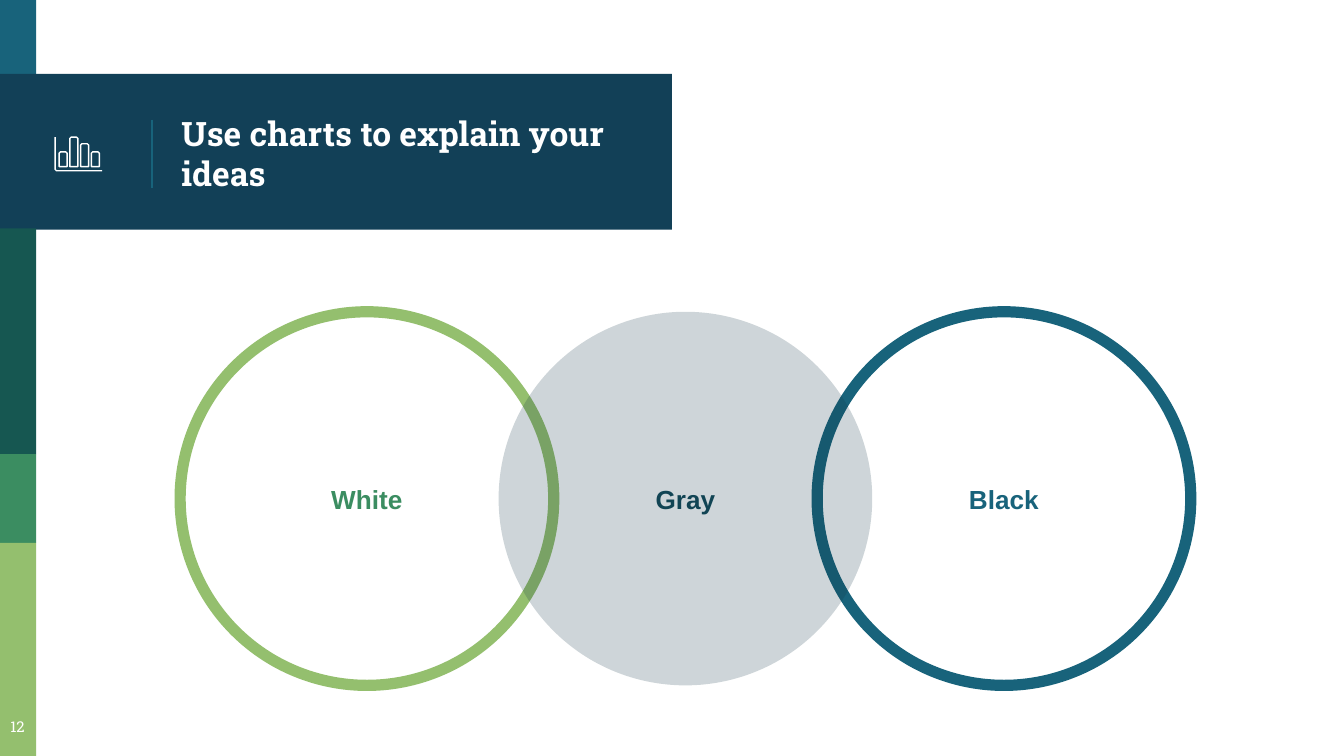
"""Build a title slide section with three overlapping labelled circles."""
from lxml.etree import SubElement
from pptx import Presentation
from pptx.dml.color import RGBColor
from pptx.enum.shapes import MSO_CONNECTOR, MSO_SHAPE
from pptx.enum.text import MSO_ANCHOR, PP_ALIGN
from pptx.oxml.ns import qn
from pptx.util import Inches, Pt

WHITE = RGBColor(0xFF, 0xFF, 0xFF)
BLUE = RGBColor(0x18, 0x63, 0x7B)
NAVY = RGBColor(0x12, 0x40, 0x57)
INK = RGBColor(0x0E, 0x31, 0x42)
SLATE = RGBColor(0x11, 0x44, 0x54)
PINE = RGBColor(0x16, 0x57, 0x51)
GREEN = RGBColor(0x3B, 0x8D, 0x61)
LIME = RGBColor(0x94, 0xBF, 0x6E)

WIDTH, HEIGHT = 10, 5.625
STRIPE = 0.27
TITLE = "Use charts to explain your ideas"
PAGE_NUMBER = "12"
BANDS = [
    (0, 0.58, STRIPE, BLUE),
    (0.55, 1.71, WIDTH / 2, NAVY),
    (1.7, 3.38, STRIPE, PINE),
    (3.38, 4.04, STRIPE, GREEN),
    (4.04, HEIGHT, STRIPE, LIME),
]
CIRCLES = [
    {"column": 0, "label": "White", "color": GREEN, "ring": LIME},
    {"column": 2, "label": "Black", "color": BLUE, "ring": BLUE},
    {"column": 1, "label": "Gray", "color": SLATE, "ring": None},
]
CIRCLE_LEFT, CIRCLE_TOP, CIRCLE_SIZE, CIRCLE_PITCH = 1.34, 2.32, 2.78, 2.37
BAR_TOPS = [1.13, 1.02, 1.07, 1.13]
BAR_LEFT, BAR_BASE, BAR_WIDTH, BAR_PITCH = 0.44, 1.24, 0.06, 0.08
AXES = [(0.41, 1.02), (0.41, 1.26), (0.42, 1.27), (0.76, 1.27)]

TITLE_FONT = {"name": "Roboto Slab", "size": Pt(18), "bold": True}
LABEL_FONT = {"name": "Arial", "size": Pt(14), "bold": True}
NUMBER_FONT = {"name": "Roboto Slab", "size": Pt(8), "bold": False}
MARGINS = ("margin_left", "margin_top", "margin_right", "margin_bottom")


def write(shape, text, font, color, align, anchor):
    frame = shape.text_frame
    frame.word_wrap = True
    frame.vertical_anchor = anchor
    for margin in MARGINS:
        setattr(frame, margin, Inches(0.1))
    para = frame.paragraphs[0]
    para.alignment = align
    span = para.add_run()
    span.text = text
    for name, value in font.items():
        setattr(span.font, name, value)
    span.font.color.rgb = color


def paint(shape, fill=None, line=None, width=0.75):
    shape.shadow.inherit = False
    for part, color in ((shape.fill, fill), (shape.line.fill, line)):
        if color is None:
            part.background()
        else:
            part.solid()
            part.fore_color.rgb = color
    if line is not None:
        shape.line.width = Pt(width)


def add_preset(page, kind, left, top, width, height):
    return page.shapes.add_shape(kind, *map(Inches, (left, top, width, height)))


def add_outline(page, points, close):
    corners = [(Inches(x), Inches(y)) for x, y in points]
    builder = page.shapes.build_freeform(*corners[0])
    builder.add_line_segments(corners[1:], close=close)
    paint(builder.convert_to_shape(), line=WHITE)


def bar_points(index, top):
    left = BAR_LEFT + index * BAR_PITCH
    right = left + BAR_WIDTH
    cut = 0.01
    return [(right, BAR_BASE), (right, top + cut), (right - cut, top),
            (left + cut, top), (left, top + cut), (left, BAR_BASE)]


def add_circle(page, column, label, color, ring):
    left = CIRCLE_LEFT + column * CIRCLE_PITCH
    circle = add_preset(page, MSO_SHAPE.OVAL, left, CIRCLE_TOP, CIRCLE_SIZE, CIRCLE_SIZE)
    if ring is None:
        paint(circle, fill=INK)
        tint = circle.fill._xPr.find(qn("a:solidFill"))[0]
        SubElement(tint, qn("a:alpha"), val="20000")
    else:
        paint(circle, line=ring, width=6)
    write(circle, label, LABEL_FONT, color, PP_ALIGN.CENTER, MSO_ANCHOR.MIDDLE)


def main():
    deck = Presentation()
    deck.slide_width, deck.slide_height = Inches(WIDTH), Inches(HEIGHT)
    page = deck.slides.add_slide(deck.slide_layouts[5])

    for top, bottom, width, color in BANDS:
        band = add_preset(page, MSO_SHAPE.RECTANGLE, 0, top, width, bottom - top)
        paint(band, fill=color)

    divider = page.shapes.add_connector(
        MSO_CONNECTOR.STRAIGHT, *map(Inches, (1.13, 0.89, 1.13, 1.4)))
    divider.line.color.rgb = BLUE
    divider.line.width = Pt(0.75)
    SubElement(divider.element.spPr, qn("a:effectLst"))

    title = page.shapes.title
    title.element.getparent().append(title.element)
    title.left, title.top, title.width, title.height = map(Inches, (1.25, 0.58, 3.51, 1.12))
    write(title, TITLE, TITLE_FONT, WHITE, PP_ALIGN.LEFT, MSO_ANCHOR.MIDDLE)

    add_outline(page, AXES, close=False)
    for index, top in enumerate(BAR_TOPS):
        add_outline(page, bar_points(index, top), close=True)

    for circle in CIRCLES:
        add_circle(page, **circle)

    number = page.shapes.add_textbox(*map(Inches, (-0.06, 5.27, 0.38, 0.35)))
    write(number, PAGE_NUMBER, NUMBER_FONT, WHITE, PP_ALIGN.CENTER, MSO_ANCHOR.TOP)
    deck.save("out.pptx")


if __name__ == "__main__":
    main()
